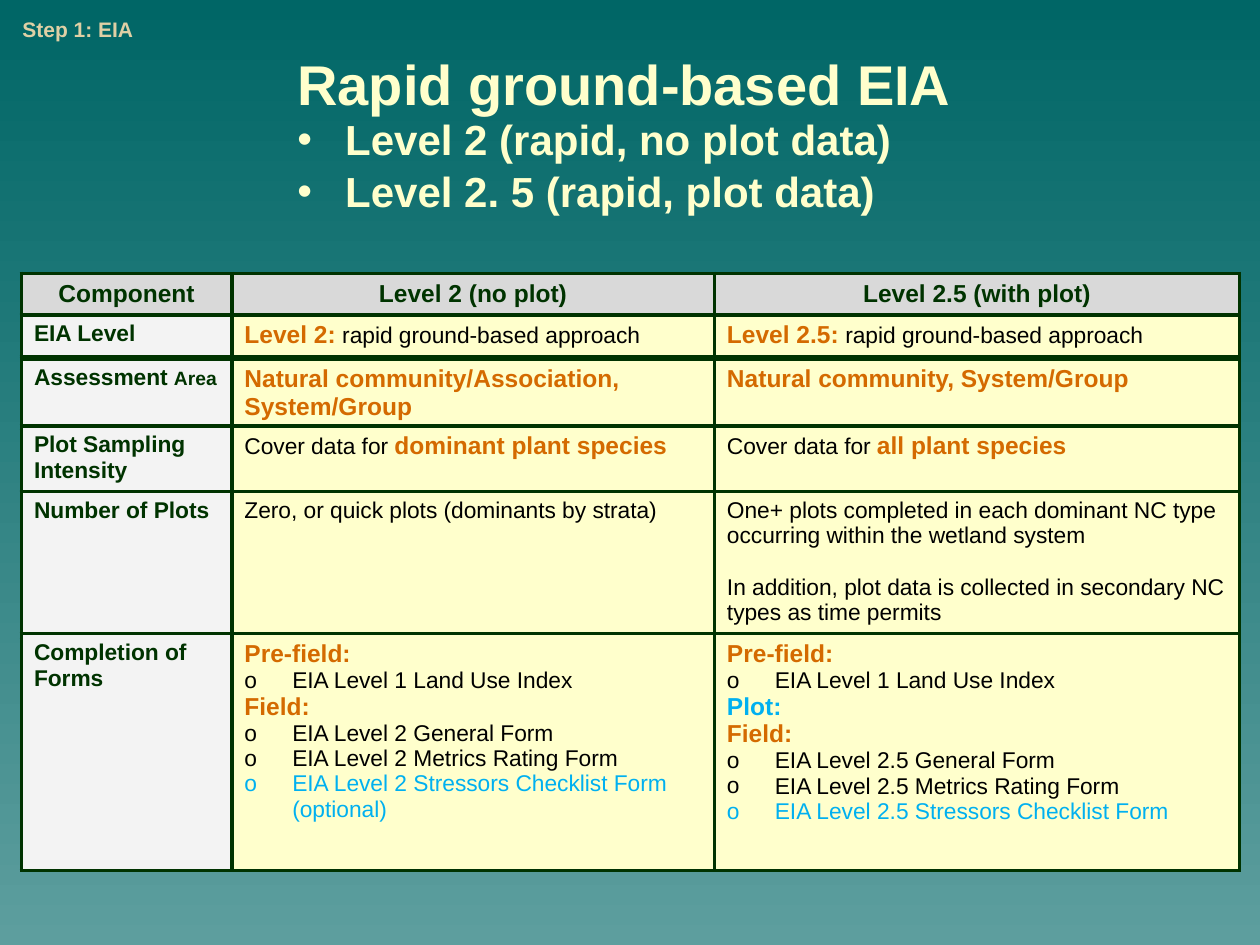
from lxml import etree
from pptx import Presentation
from pptx.dml.color import RGBColor
from pptx.enum.text import MSO_ANCHOR, MSO_AUTO_SIZE, PP_ALIGN
from pptx.oxml.ns import qn
from pptx.util import Inches, Pt

LEFT, CENTER = PP_ALIGN.LEFT, PP_ALIGN.CENTER
TOP, MIDDLE = MSO_ANCHOR.TOP, MSO_ANCHOR.MIDDLE
NO_AUTOFIT = MSO_AUTO_SIZE.NONE

TEAL = RGBColor(0x00, 0x66, 0x66)
PALE_TEAL = RGBColor(0x5D, 0x9E, 0x9E)
CREAM = RGBColor(0xFF, 0xFF, 0xCC)
SAND = RGBColor(0xDF, 0xD0, 0xA5)
DARK_GREEN = RGBColor(0x00, 0x33, 0x00)
ORANGE = RGBColor(0xD4, 0x6A, 0x00)
SKY = RGBColor(0x00, 0xB0, 0xF0)
BLACK = RGBColor(0x00, 0x00, 0x00)
HEADER_GREY = RGBColor(0xD9, 0xD9, 0xD9)
LABEL_GREY = RGBColor(0xF3, 0xF3, 0xF3)

STYLES = {
    "header": dict(size=14, color=DARK_GREEN, bold=True),
    "label": dict(size=13, color=DARK_GREEN, bold=True),
    "small label": dict(size=11, color=DARK_GREEN, bold=True),
    "key": dict(size=14, color=ORANGE, bold=True),
    "plot key": dict(size=14, color=SKY, bold=True),
    "body": dict(size=13, color=BLACK),
    "item": dict(size=13, color=BLACK),
    "optional item": dict(size=13, color=SKY),
}
LIST_STYLES = ("item", "optional item")


def add_run(paragraph, text, size=13, color=BLACK, bold=False):
    run = paragraph.add_run()
    run.text = text
    run.font.name = "Arial"
    run.font.size = Pt(size)
    run.font.bold = bold
    run.font.color.rgb = color


def set_bullet(paragraph, character):
    properties = paragraph._p.get_or_add_pPr()
    properties.set("marL", str(Inches(0.38)))
    properties.set("indent", str(-Inches(0.38)))
    etree.SubElement(properties, qn("a:buFont"), typeface="Arial")
    etree.SubElement(properties, qn("a:buChar"), char=character)


presentation = Presentation()
presentation.slide_width, presentation.slide_height = Inches(10), Inches(7.5)
slide = presentation.slides.add_slide(presentation.slide_layouts[1])

background = slide.background.fill
background.gradient()
background.gradient_angle = 270
for stop, color in zip(background.gradient_stops, (TEAL, PALE_TEAL)):
    stop.color.rgb = color

# Title and the two levels below it
title, levels = slide.shapes.title, slide.placeholders[1]
for shape, top, height in ((title, 0.39, 0.51), (levels, 0.9, 0.85)):
    shape.left, shape.top = Inches(2.36), Inches(top)
    shape.width, shape.height = Inches(7.4), Inches(height)
    frame = shape.text_frame
    frame.auto_size, frame.vertical_anchor = NO_AUTOFIT, TOP
    frame.margin_left = frame.margin_right = 0
    frame.margin_top = frame.margin_bottom = 0

title_paragraph = title.text_frame.paragraphs[0]
title_paragraph.alignment = LEFT
add_run(title_paragraph, "Rapid ground-based EIA", size=32, color=CREAM, bold=True)

level_names = ("Level 2 (rapid, no plot data)", "Level 2. 5 (rapid, plot data)")
for index, name in enumerate(level_names):
    frame = levels.text_frame
    paragraph = frame.add_paragraph() if index else frame.paragraphs[0]
    set_bullet(paragraph, "•")
    paragraph.space_before = Pt(1 if index else 0)
    add_run(paragraph, name, size=24, color=CREAM, bold=True)

step = slide.shapes.add_textbox(Inches(0.08), Inches(0.08), Inches(1.25), Inches(0.3))
step.text_frame.word_wrap = True
add_run(step.text_frame.paragraphs[0], "Step 1: EIA", size=12, color=SAND, bold=True)

# Each band is (top, height, cells); a cell lists paragraphs, a paragraph lists runs
BANDS = [
    (2.17, 0.33, [
        [[("Component", "header")]],
        [[("Level 2 (no plot)", "header")]],
        [[("Level 2.5 (with plot)", "header")]],
    ]),
    (2.5, 0.33, [
        [[("EIA Level", "label")]],
        [[("Level 2:", "key"), (" rapid ground-based approach", "body")]],
        [[("Level 2.5:", "key"), (" rapid ground-based approach", "body")]],
    ]),
    (2.85, 0.57, [
        [[("Assessment ", "label"), ("Area", "small label")]],
        [[("Natural community/Association, System/Group", "key")]],
        [[("Natural community, System/Group", "key")]],
    ]),
    (3.38, 0.53, [
        [[("Plot Sampling Intensity", "label")]],
        [[("Cover data for ", "body"), ("dominant plant species", "key")]],
        [[("Cover data for ", "body"), ("all plant species", "key")]],
    ]),
    (3.9, 1.18, [
        [[("Number of Plots", "label")]],
        [[("Zero, or quick plots (dominants by strata)", "body")]],
        [[("One+ plots completed in each dominant NC type occurring "
           "within the wetland system", "body")],
         [("In addition, plot data is collected in secondary NC types "
           "as time permits", "body")]],
    ]),
    (5.03, 1.88, [
        [[("Completion of Forms", "label")]],
        [[("Pre-field:", "key")],
         [("EIA Level 1 Land Use Index", "item")],
         [("Field:", "key")],
         [("EIA Level 2 General Form", "item")],
         [("EIA Level 2 Metrics Rating Form", "item")],
         [("EIA Level 2 Stressors Checklist Form (optional)", "optional item")]],
        [[("Pre-field:", "key")],
         [("EIA Level 1 Land Use Index", "item")],
         [("Plot:", "plot key")],
         [("Field:", "key")],
         [("EIA Level 2.5 General Form", "item")],
         [("EIA Level 2.5 Metrics Rating Form", "item")],
         [("EIA Level 2.5 Stressors Checklist Form", "optional item")]],
    ]),
]
COLUMN_WIDTHS = (1.67, 3.83, 4.17)

for band, (top, height, cells) in enumerate(BANDS):
    table = slide.shapes.add_table(
        1, len(COLUMN_WIDTHS), Inches(0.17), Inches(top),
        Inches(sum(COLUMN_WIDTHS)), Inches(height)).table
    table.first_row = table.horz_banding = False
    is_header = band == 0

    for column, (width, paragraphs) in enumerate(zip(COLUMN_WIDTHS, cells)):
        table.columns[column].width = Inches(width)
        cell = table.cell(0, column)
        cell.vertical_anchor = MIDDLE if is_header else TOP

        cell_properties = cell._tc.get_or_add_tcPr()
        for side in ("a:lnL", "a:lnR", "a:lnT", "a:lnB"):
            border = etree.SubElement(cell_properties, qn(side), w=str(Pt(2.25)))
            line_fill = etree.SubElement(border, qn("a:solidFill"))
            etree.SubElement(line_fill, qn("a:srgbClr"), val=str(DARK_GREEN))
        cell.fill.solid()
        body_fill = CREAM if column else LABEL_GREY
        cell.fill.fore_color.rgb = HEADER_GREY if is_header else body_fill

        frame = cell.text_frame
        for index, runs in enumerate(paragraphs):
            paragraph = frame.add_paragraph() if index else frame.paragraphs[0]
            first_style = runs[0][1]
            if first_style in LIST_STYLES:
                set_bullet(paragraph, "o")
            elif first_style == "body" and index:
                paragraph.space_before = Pt(15)
            paragraph.alignment = CENTER if is_header else LEFT
            for text, style in runs:
                add_run(paragraph, text, **STYLES[style])

presentation.save("out.pptx")
